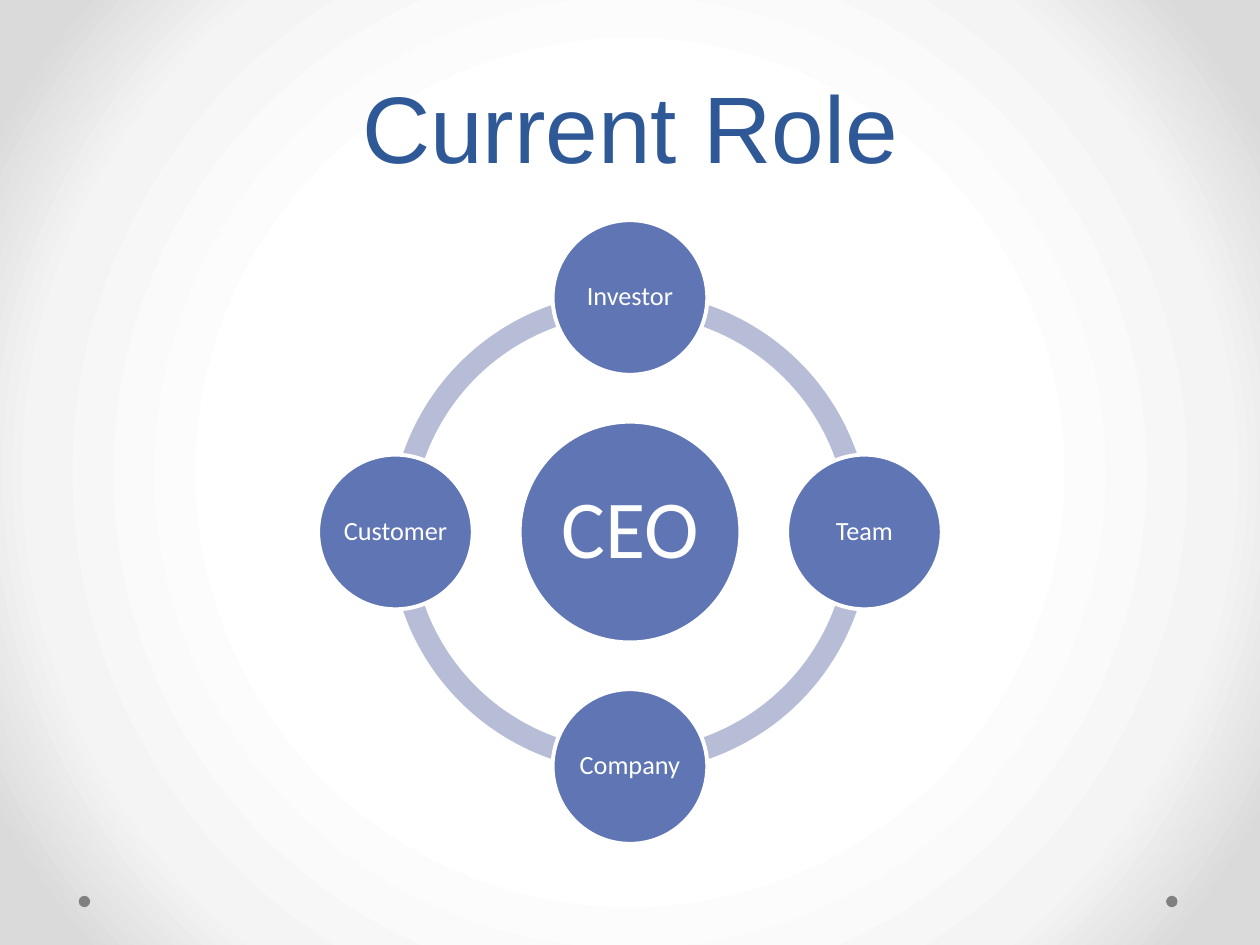
from math import cos, radians, sin

from pptx import Presentation
from pptx.dml.color import RGBColor
from pptx.enum.shapes import MSO_SHAPE
from pptx.enum.text import MSO_ANCHOR, MSO_AUTO_SIZE, PP_ALIGN
from pptx.oxml import parse_xml
from pptx.oxml.ns import nsdecls, qn
from pptx.util import Inches, Pt

COLORS = {
    "title": "2F5897",
    "circle": "6076B4",
    "ring": "B7BDD6",
    "dot": "808080",
    "white": "FFFFFF",
}
BACKDROP_STOPS = {50: "FFFFFF", 76: "F4F4F4", 92: "DADADA"}
ROLES = ["Investor", "Team", "Company", "Customer"]


def color(name):
    return RGBColor.from_string(COLORS[name])


def paint_backdrop(slide):
    slide.background.fill.gradient()
    linear = slide.element.find(".//" + qn("a:gradFill"))
    stops = "".join(
        f'<a:gs pos="{share * 1000}"><a:srgbClr val="{tone}"/></a:gs>'
        for share, tone in BACKDROP_STOPS.items()
    )
    radial = parse_xml(
        f'<a:gradFill {nsdecls("a")} rotWithShape="1"><a:gsLst>{stops}</a:gsLst>'
        '<a:path path="circle">'
        '<a:fillToRect l="50000" t="50000" r="50000" b="50000"/>'
        "</a:path></a:gradFill>"
    )
    linear.getparent().replace(linear, radial)


def add_round(slide, preset, center_x, center_y, diameter, fill):
    left, top = center_x - diameter / 2, center_y - diameter / 2
    figure = slide.shapes.add_shape(
        preset, int(left), int(top), int(diameter), int(diameter)
    )
    figure.shadow.inherit = False
    figure.fill.solid()
    figure.fill.fore_color.rgb = color(fill)
    figure.line.fill.background()
    return figure


def style_text(frame, font, size, tone, spacing):
    paragraph = frame.paragraphs[0]
    paragraph.alignment = PP_ALIGN.CENTER
    paragraph.line_spacing = spacing
    for run in paragraph.runs:
        run.font.name = font
        run.font.size = Pt(size)
        run.font.color.rgb = color(tone)


def add_role(slide, label, center_x, center_y, diameter, size, inset):
    role = add_round(slide, MSO_SHAPE.OVAL, center_x, center_y, diameter, "circle")
    role.line.color.rgb = color("white")
    role.line.width = Pt(2.25)
    frame = role.text_frame
    frame.word_wrap = True
    frame.vertical_anchor = MSO_ANCHOR.MIDDLE
    frame.margin_left = frame.margin_right = Inches(inset)
    frame.margin_top = frame.margin_bottom = Inches(inset)
    frame.text = label
    style_text(frame, "Calibri", size, "white", 0.9)


def add_title(slide, left, top, width, height):
    title = slide.shapes.title
    title.left, title.top = int(left), int(top)
    title.width, title.height = int(width), int(height)
    frame = title.text_frame
    frame.text = "Current Role"
    frame.auto_size = MSO_AUTO_SIZE.NONE
    frame.vertical_anchor = MSO_ANCHOR.BOTTOM
    style_text(frame, "Arial", 54, "title", Pt(58))


def add_role_wheel(slide, left, top, side):
    center_x, center_y = left + side / 2, top + side / 2
    node = side * 0.248
    orbit = (side - node) / 2
    step = 360 / len(ROLES)
    for index in range(len(ROLES)):
        arc = add_round(
            slide, MSO_SHAPE.BLOCK_ARC, center_x, center_y, side * 0.77, "ring"
        )
        start, end = index * step, (index + 1) * step % 360
        arc.adjustments[0] = start * 0.6
        arc.adjustments[1] = end * 0.6
        arc.adjustments[2] = 0.046
    add_role(slide, "CEO", center_x, center_y, side * 0.354, 47, 0.07)
    for index, label in enumerate(ROLES):
        angle = radians(index * step - 90)
        add_role(
            slide,
            label,
            center_x + orbit * cos(angle),
            center_y + orbit * sin(angle),
            node,
            15,
            0.02,
        )


def add_corner_dots(slide, width, height):
    for share in (0.93, 0.067):
        add_round(
            slide, MSO_SHAPE.OVAL, width * share, height * 0.954, width * 0.009, "dot"
        )


def main():
    deck = Presentation()
    deck.slide_width, deck.slide_height = Inches(10), Inches(7.5)
    width, height = deck.slide_width, deck.slide_height
    slide = deck.slides.add_slide(deck.slide_layouts[5])
    paint_backdrop(slide)
    add_corner_dots(slide, width, height)
    add_title(slide, width * 0.05, height * 0.023, width * 0.9, height * 0.177)
    wheel = height * 0.66
    add_role_wheel(slide, (width - wheel) / 2, height * 0.233, wheel)
    deck.save("out.pptx")


if __name__ == "__main__":
    main()
